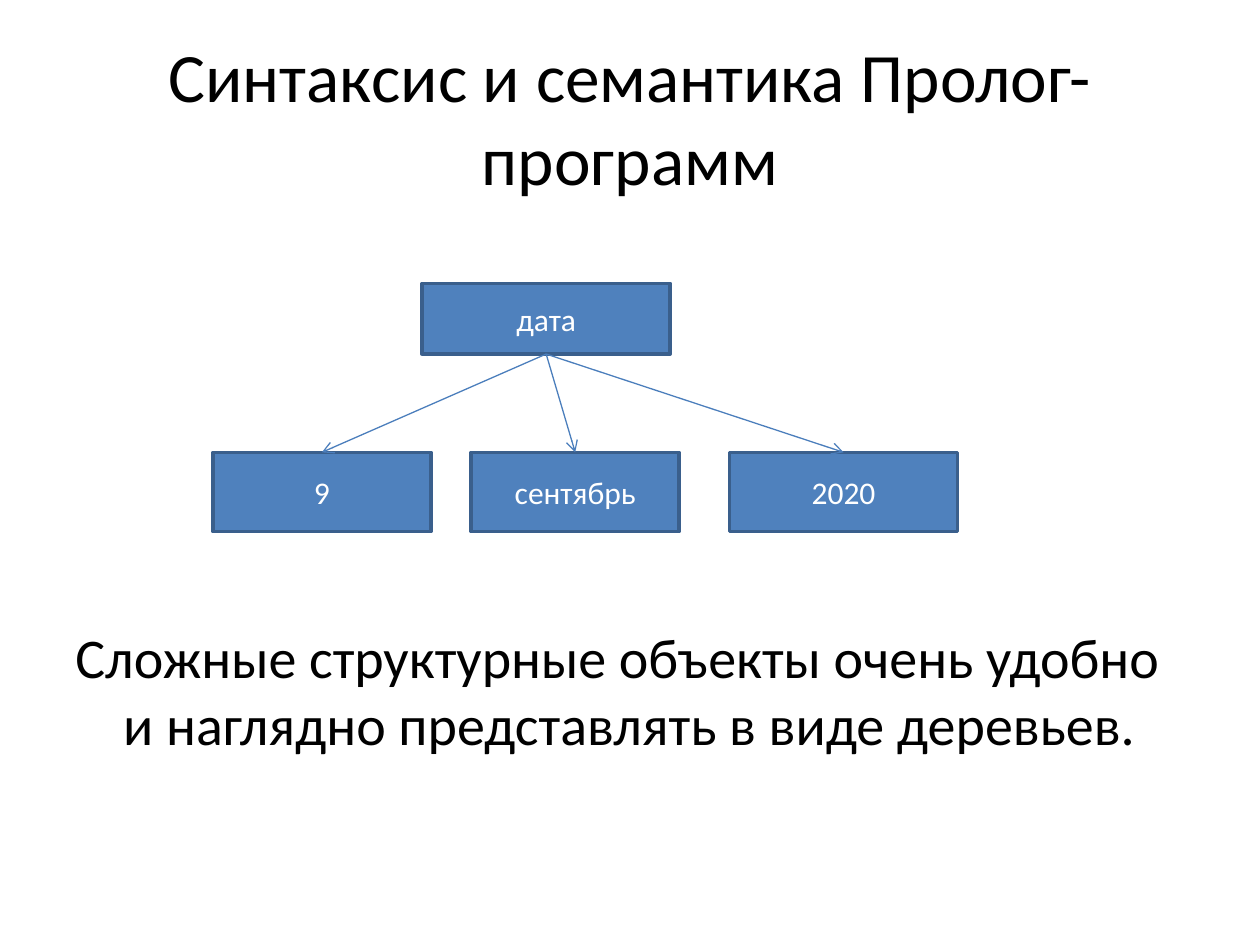
"""Builds a slide that shows a Prolog structure as a tree."""
from lxml import etree
from pptx import Presentation
from pptx.dml.color import RGBColor
from pptx.enum.shapes import MSO_CONNECTOR, MSO_SHAPE
from pptx.enum.text import MSO_ANCHOR, PP_ALIGN
from pptx.oxml.ns import qn
from pptx.util import Inches, Pt

RECTANGLE = MSO_SHAPE.RECTANGLE
STRAIGHT = MSO_CONNECTOR.STRAIGHT
MIDDLE, TOP = MSO_ANCHOR.MIDDLE, MSO_ANCHOR.TOP
CENTER, LEFT = PP_ALIGN.CENTER, PP_ALIGN.LEFT
BOTTOM_SITE, TOP_SITE = 2, 0

TITLE = "Синтаксис и семантика Пролог-программ"
STATEMENT = "Сложные структурные объекты очень удобно и наглядно представлять в виде деревьев."
ROOT = "дата"
LEAVES = [("9", 1.73), ("сентябрь", 1.65), ("2020", 1.81)]

COLORS = {"text": "000000", "node": "4F81BD", "border": "3A5F8C",
          "node_text": "FFFFFF", "arrow": "4B7EBC"}
TITLE_BOX = (0.5, 0.3, 9, 1.25)
STATEMENT_BOX = (0.5, 4.89, 9, 1.2)
ROOT_BOX = (3.35, 2.25, 1.97, 0.56)
LEAF_LEFT, LEAF_TOP, LEAF_PITCH, LEAF_HEIGHT = 1.69, 3.59, 2.05, 0.63
HANGING_INDENT = 0.38


def color(name):
    return RGBColor.from_string(COLORS[name])


def write(shape, text, size, color_name, alignment=CENTER, anchor=MIDDLE):
    frame = shape.text_frame
    frame.word_wrap = True
    frame.vertical_anchor = anchor
    paragraph = frame.paragraphs[0]
    paragraph.alignment = alignment
    run = paragraph.add_run()
    run.text = text
    for name, value in {"name": "Calibri", "size": Pt(size)}.items():
        setattr(run.font, name, value)
    run.font.color.rgb = color(color_name)
    return paragraph


def add_text(slide, box, text, size, **layout):
    shape = slide.shapes.add_textbox(*map(Inches, box))
    return write(shape, text, size, "text", **layout)


def add_node(slide, box, text):
    shape = slide.shapes.add_shape(RECTANGLE, *map(Inches, box))
    shape.shadow.inherit = False
    shape.fill.solid()
    shape.fill.fore_color.rgb = color("node")
    shape.line.color.rgb = color("border")
    shape.line.width = Pt(2)
    write(shape, text, 18, "node_text")
    return shape


def add_arrow(slide, parent, child):
    arrow = slide.shapes.add_connector(STRAIGHT, 0, 0, 0, 0)
    arrow.begin_connect(parent, BOTTOM_SITE)
    arrow.end_connect(child, TOP_SITE)
    arrow.line.color.rgb = color("arrow")
    arrow.line.width = Pt(0.75)
    etree.SubElement(arrow.line._get_or_add_ln(), qn("a:tailEnd"), type="arrow")
    etree.SubElement(arrow._element.spPr, qn("a:effectLst"))


def main():
    presentation = Presentation()
    presentation.slide_width, presentation.slide_height = Inches(10), Inches(7.5)
    slide = presentation.slides.add_slide(presentation.slide_layouts[6])

    add_text(slide, TITLE_BOX, TITLE, 39.6)
    statement = add_text(slide, STATEMENT_BOX, STATEMENT, 32, alignment=LEFT, anchor=TOP)
    properties = statement._p.get_or_add_pPr()
    for name, indent in {"marL": HANGING_INDENT, "indent": -HANGING_INDENT}.items():
        properties.set(name, str(Inches(indent)))

    root = add_node(slide, ROOT_BOX, ROOT)
    for index, (text, width) in enumerate(LEAVES):
        left = LEAF_LEFT + index * LEAF_PITCH
        leaf = add_node(slide, (left, LEAF_TOP, width, LEAF_HEIGHT), text)
        add_arrow(slide, root, leaf)

    presentation.save("out.pptx")


if __name__ == "__main__":
    main()
